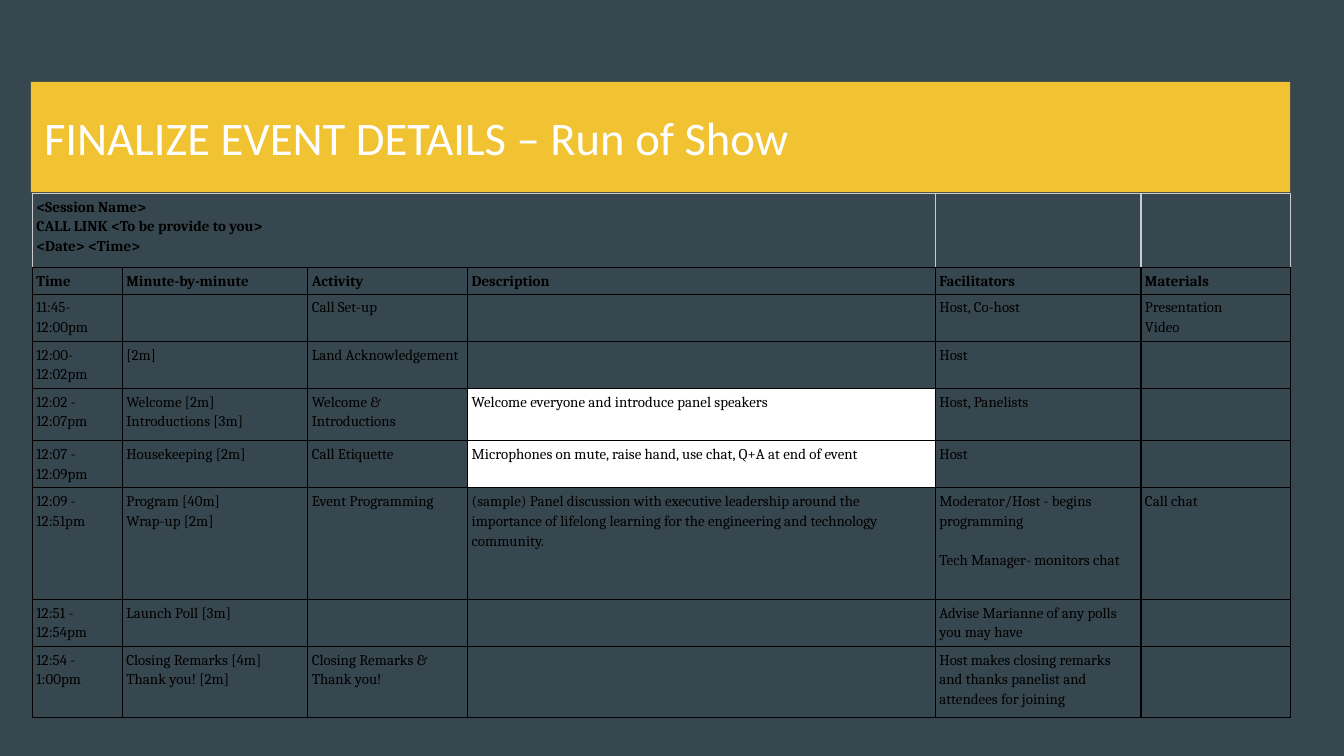
import lxml.etree
import pptx
import pptx.dml.color
import pptx.enum.shapes
import pptx.enum.text
import pptx.oxml.ns
import pptx.util

Inches = pptx.util.Inches
Pt = pptx.util.Pt

COLORS = {
    "background": "37474F",
    "banner": "F1C232",
    "title": "FFFFFF",
    "text": "000000",
    "grid": "000000",
    "session_grid": "CCCCCC",
    "highlight": "FFFFFF",
}
COLUMN_WIDTHS = [0.67, 1.38, 1.19, 3.48, 1.53, 1.11]
ROW_HEIGHTS = [0.55, 0.2, 0.35, 0.35, 0.39, 0.35, 0.83, 0.35, 0.53]
HIGHLIGHTED_CELLS = {(4, 3), (5, 3)}
SCHEDULE = [
    ["<Session Name>\nCALL LINK <To be provide to you>\n<Date> <Time>", "", "", "", "", ""],
    ["Time", "Minute-by-minute", "Activity", "Description", "Facilitators", "Materials"],
    ["11:45-\n12:00pm", "", "Call Set-up", "", "Host, Co-host", "Presentation\nVideo"],
    ["12:00-\n12:02pm", "[2m]", "Land Acknowledgement", "", "Host", ""],
    ["12:02 -\n12:07pm", "Welcome [2m]\nIntroductions [3m]", "Welcome & Introductions",
     "Welcome everyone and introduce panel speakers", "Host, Panelists", ""],
    ["12:07 -\n12:09pm", "Housekeeping [2m]", "Call Etiquette",
     "Microphones on mute, raise hand, use chat, Q+A at end of event", "Host", ""],
    ["12:09 -\n12:51pm", "Program [40m]\nWrap-up [2m]", "Event Programming",
     "(sample) Panel discussion with executive leadership around the importance of "
     "lifelong learning for the engineering and technology community.",
     "Moderator/Host - begins programming\nTech Manager- monitors chat", "Call chat"],
    ["12:51 -\n12:54pm", "Launch Poll [3m]", "", "",
     "Advise Marianne of any polls you may have", ""],
    ["12:54 -\n1:00pm", "Closing Remarks [4m]\nThank you! [2m]",
     "Closing Remarks & Thank you!", "",
     "Host makes closing remarks and thanks panelist and attendees for joining", ""],
]


def rgb(name):
    """Return the named palette colour."""
    return pptx.dml.color.RGBColor.from_string(COLORS[name])


def add_banner(slide, left, top, width, height):
    """Place the title banner in the given box."""
    banner = slide.shapes.add_shape(
        pptx.enum.shapes.MSO_SHAPE.RECTANGLE,
        Inches(left), Inches(top), Inches(width), Inches(height))
    banner.shadow.inherit = False
    banner.fill.solid()
    banner.fill.fore_color.rgb = rgb("banner")
    banner.line.fill.background()
    frame = banner.text_frame
    frame.word_wrap = True
    frame.vertical_anchor = pptx.enum.text.MSO_ANCHOR.MIDDLE
    frame.margin_left = frame.margin_right = Inches(0.1)
    frame.margin_top = frame.margin_bottom = Inches(0.1)
    frame.text = "FINALIZE EVENT DETAILS – Run of Show"
    title = frame.paragraphs[0]
    title.alignment = pptx.enum.text.PP_ALIGN.LEFT
    title.font.name = "Calibri"
    title.font.size = Pt(25)
    title.font.color.rgb = rgb("title")


def set_borders(cell, side_colors):
    """Draw thin borders on a cell from a mapping of side to colour name."""
    properties = cell._tc.get_or_add_tcPr()
    qn = pptx.oxml.ns.qn
    for side, color in side_colors.items():
        border = lxml.etree.SubElement(properties, qn(f"a:ln{side}"), w=str(Pt(0.75)))
        fill = lxml.etree.SubElement(border, qn("a:solidFill"))
        lxml.etree.SubElement(fill, qn("a:srgbClr"), val=COLORS[color])


def style_cell(cell, text, bold, highlighted, side_colors):
    """Fill a schedule cell with text, borders and background."""
    cell.margin_left = cell.margin_right = Inches(0.03)
    cell.margin_top = cell.margin_bottom = Inches(0.02)
    set_borders(cell, side_colors)
    if highlighted:
        cell.fill.solid()
        cell.fill.fore_color.rgb = rgb("highlight")
    else:
        cell.fill.background()
    cell.text_frame.text = text
    for paragraph in cell.text_frame.paragraphs:
        paragraph.line_spacing = 1.15
        paragraph.font.name = "Cambria"
        paragraph.font.size = Pt(8)
        paragraph.font.bold = bold
        paragraph.font.color.rgb = rgb("text")


def add_schedule(slide, left, top, width, height):
    """Place the run-of-show table in the given box."""
    schedule = slide.shapes.add_table(
        len(ROW_HEIGHTS), len(COLUMN_WIDTHS),
        Inches(left), Inches(top), Inches(width), Inches(height)).table
    schedule.first_row = schedule.horz_banding = False
    for column, column_width in zip(schedule.columns, COLUMN_WIDTHS):
        column.width = Inches(column_width)
    for row, row_height in zip(schedule.rows, ROW_HEIGHTS):
        row.height = Inches(row_height)
    schedule.cell(0, 0).merge(schedule.cell(0, 3))
    for r, texts in enumerate(SCHEDULE):
        side_colors = dict.fromkeys("LRT", "grid" if r else "session_grid")
        side_colors["B"] = "grid"
        for c, text in enumerate(texts):
            style_cell(schedule.cell(r, c), text, r < 2,
                       (r, c) in HIGHLIGHTED_CELLS, side_colors)
    tech_manager = schedule.cell(6, 4).text_frame.paragraphs[1]
    tech_manager.space_before = Pt(10.7)


def main():
    """Build and save the run-of-show slide."""
    deck = pptx.Presentation()
    deck.slide_width = Inches(10)
    deck.slide_height = Inches(10 * 9 / 16)
    slide = deck.slides.add_slide(deck.slide_layouts[6])
    slide.background.fill.solid()
    slide.background.fill.fore_color.rgb = rgb("background")
    add_banner(slide, 0.23, 0.61, 9.37, 0.82)
    add_schedule(slide, 0.24, 1.44, sum(COLUMN_WIDTHS), sum(ROW_HEIGHTS))
    deck.save("out.pptx")


if __name__ == "__main__":
    main()
